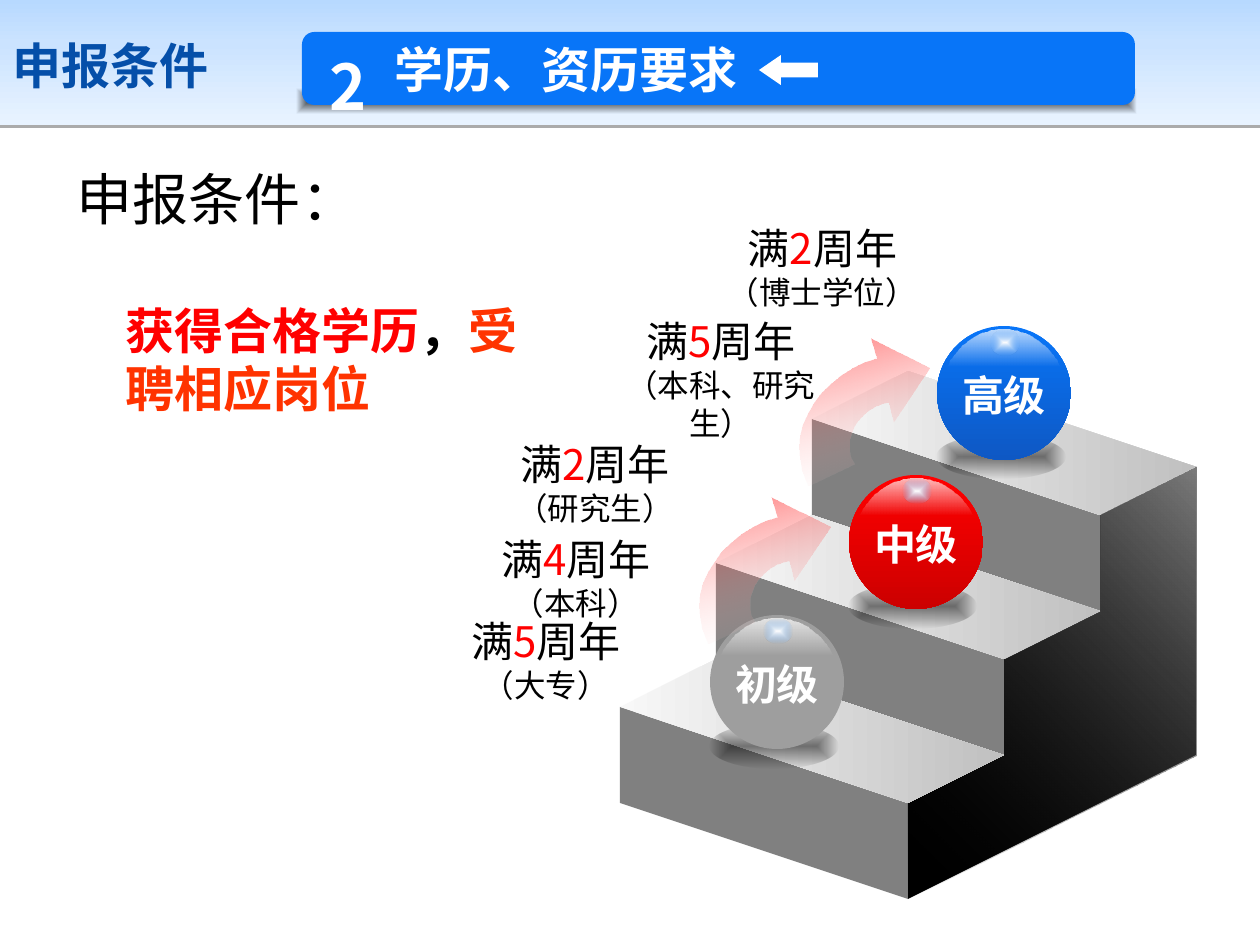
import dataclasses
import math

import lxml.etree
import pptx
import pptx.dml.color
import pptx.enum.shapes
import pptx.enum.text
import pptx.oxml.ns
import pptx.shapes.autoshape
import pptx.slide
import pptx.util

EMU_PER_PX = 914400 / 126
RGBColor = pptx.dml.color.RGBColor
Shapes = pptx.enum.shapes.MSO_SHAPE
Align = pptx.enum.text.PP_ALIGN
Anchor = pptx.enum.text.MSO_ANCHOR
qn = pptx.oxml.ns.qn

BLACK = RGBColor(0x00, 0x00, 0x00)
WHITE = RGBColor(0xFF, 0xFF, 0xFF)
RED = RGBColor(0xFF, 0x00, 0x00)
DARK_RED = RGBColor(0xCC, 0x00, 0x00)
ORANGE = RGBColor(0xFF, 0x33, 0x00)
BLUE = RGBColor(0x08, 0x75, 0xF8)
DARK_BLUE = RGBColor(0x0E, 0x58, 0xC4)
TITLE_BLUE = RGBColor(0x05, 0x4F, 0xA9)
GLINT_BLUE = RGBColor(0x67, 0xAB, 0xF5)
HEADER_TOP = RGBColor(0xB7, 0xD9, 0xFF)
HEADER_MIDDLE = RGBColor(0xCB, 0xE3, 0xFF)
HEADER_BOTTOM = RGBColor(0xE8, 0xF3, 0xFF)
GRAY = RGBColor(0x80, 0x80, 0x80)
BALL_GRAY = RGBColor(0x9E, 0x9E, 0x9E)
STEP_LIGHT = RGBColor(0xF8, 0xF8, 0xF8)
STEP_DARK = RGBColor(0xC0, 0xC0, 0xC0)
SIDE_GRAY = RGBColor(0x7C, 0x7C, 0x7C)
CJK = "Noto Sans CJK SC"

Point = tuple[float, float]
Box = tuple[int, int, int, int]


@dataclasses.dataclass(frozen=True)
class Stop:
    position: int
    color: RGBColor
    opacity: int = 100


@dataclasses.dataclass(frozen=True)
class Gradient:
    stops: tuple[Stop, ...]
    angle: int | None = None


@dataclasses.dataclass(frozen=True)
class Run:
    text: str
    color: RGBColor = BLACK
    size: int | None = None


@dataclasses.dataclass(frozen=True)
class Ball:
    label: str
    left: int
    top: int
    fill: RGBColor | Gradient


@dataclasses.dataclass(frozen=True)
class Requirement:
    years: str
    degree: str
    left: int
    top: int
    width: int = 266


def two_stops(first: Stop, last: Stop, angle: int | None = None) -> Gradient:
    return Gradient((first, last), angle)


def px(length: float) -> int:
    return round(length * EMU_PER_PX)


def paint(shape: pptx.shapes.autoshape.Shape, fill: RGBColor | Gradient) -> None:
    shape.shadow.inherit = False
    shape.line.fill.background()
    if isinstance(fill, RGBColor):
        shape.fill.solid()
        shape.fill.fore_color.rgb = fill
        return
    shape.fill.gradient()
    element = shape._element.spPr.find(qn("a:gradFill"))
    for child in list(element):
        element.remove(child)
    stop_list = lxml.etree.SubElement(element, qn("a:gsLst"))
    for stop in fill.stops:
        stop_element = lxml.etree.SubElement(stop_list, qn("a:gs"), pos=str(stop.position * 1000))
        color = lxml.etree.SubElement(stop_element, qn("a:srgbClr"), val=str(stop.color))
        if stop.opacity < 100:
            lxml.etree.SubElement(color, qn("a:alpha"), val=str(stop.opacity * 1000))
    if fill.angle is None:
        radial = lxml.etree.SubElement(element, qn("a:path"), path="shape")
        lxml.etree.SubElement(radial, qn("a:fillToRect"), l="50000", t="50000", r="50000", b="50000")
    else:
        lxml.etree.SubElement(element, qn("a:lin"), ang=str(fill.angle * 60000), scaled="0")


def add_preset(slide: pptx.slide.Slide, kind: Shapes, box: Box, fill: RGBColor | Gradient,
               adjustments: tuple[float, ...] = ()) -> pptx.shapes.autoshape.Shape:
    shape = slide.shapes.add_shape(kind, *map(px, box))
    for index, value in enumerate(adjustments):
        shape.adjustments[index] = value
    paint(shape, fill)
    return shape


def add_outline(slide: pptx.slide.Slide, points: list[Point], fill: RGBColor | Gradient) -> None:
    builder = slide.shapes.build_freeform(*points[0], scale=EMU_PER_PX)
    builder.add_line_segments(points[1:], close=True)
    paint(builder.convert_to_shape(), fill)


def add_text(slide: pptx.slide.Slide, box: Box, paragraphs: list[list[Run]], *, size: int,
             font: str = CJK, bold: bool = False, align: Align = Align.LEFT,
             anchor: Anchor = Anchor.TOP, side_inset: int = 13, top_inset: int = 6,
             line_spacing: float | None = None) -> None:
    frame = slide.shapes.add_textbox(*map(px, box)).text_frame
    frame.word_wrap = True
    frame.vertical_anchor = anchor
    frame.margin_left = frame.margin_right = px(side_inset)
    frame.margin_top = frame.margin_bottom = px(top_inset)
    for index, runs in enumerate(paragraphs):
        paragraph = frame.paragraphs[0] if index == 0 else frame.add_paragraph()
        paragraph.alignment = align
        paragraph.line_spacing = line_spacing
        for item in runs:
            run = paragraph.add_run()
            run.text = item.text
            run.font.size = pptx.util.Pt(item.size or size)
            run.font.bold = bold
            run.font.name = font
            run.font.color.rgb = item.color
            lxml.etree.SubElement(run._r.get_or_add_rPr(), qn("a:ea"), typeface=font)


def add_header(slide: pptx.slide.Slide) -> None:
    stops = (Stop(0, HEADER_TOP), Stop(35, HEADER_MIDDLE), Stop(100, HEADER_BOTTOM))
    band = add_preset(slide, Shapes.RECTANGLE, (0, 0, 1260, 125), Gradient(stops, 90))
    effects = band._element.spPr.find(qn("a:effectLst"))
    shadow = lxml.etree.SubElement(effects, qn("a:outerShdw"), dist="20320", dir="5400000")
    color = lxml.etree.SubElement(shadow, qn("a:srgbClr"), val=str(BLACK))
    lxml.etree.SubElement(color, qn("a:alpha"), val="32000")
    add_text(slide, (0, 20, 1131, 89), [[Run("申报条件", TITLE_BLUE)]], size=28, font="Arial",
             bold=True, anchor=Anchor.MIDDLE)
    add_preset(slide, Shapes.RECTANGLE, (297, 89, 839, 25),
               two_stops(Stop(0, BLACK, 70), Stop(100, BLACK, 0)))
    add_preset(slide, Shapes.ROUNDED_RECTANGLE, (302, 32, 833, 73), BLUE, (0.17,))
    add_preset(slide, Shapes.LEFT_ARROW, (759, 55, 59, 30), WHITE, (0.5, 0.73))
    add_text(slide, (336, 48, 25, 39), [[Run("2", WHITE)]], size=36, bold=True,
             align=Align.CENTER, side_inset=-10, top_inset=0)
    add_text(slide, (312, 32, 745, 73), [[Run("学历、资历要求", WHITE)]], size=28, bold=True,
             anchor=Anchor.MIDDLE, side_inset=83)


def add_stairs(slide: pptx.slide.Slide) -> None:
    side = [(908, 899), (908, 803), (1004, 755), (1004, 659), (1100, 611), (1100, 515),
            (1196, 467), (1196, 755)]
    tread = two_stops(Stop(0, STEP_LIGHT), Stop(100, STEP_DARK), 0)
    corners = [(620 + 96 * step, 707 - 144 * step) for step in range(3)]
    add_outline(slide, side, BLACK)
    for x, y in corners:
        add_outline(slide, [(x, y), (x + 288, y + 96), (x + 288, y + 192), (x, y + 96)], GRAY)
    for x, y in reversed(corners):
        add_outline(slide, [(x, y), (x + 96, y - 48), (x + 384, y + 48), (x + 288, y + 96)], tread)
    add_outline(slide, side, two_stops(Stop(0, BLACK, 0), Stop(100, SIDE_GRAY), 315))


def add_ball(slide: pptx.slide.Slide, ball: Ball) -> None:
    left, top = ball.left, ball.top
    add_preset(slide, Shapes.OVAL, (left, top + 109, 128, 44),
               two_stops(Stop(0, BLACK, 50), Stop(100, BLACK, 0)))
    add_preset(slide, Shapes.OVAL, (left, top, 134, 134), ball.fill)
    angles = [math.radians(degrees) for degrees in range(-66, 67, 3)]
    cap = [(left + 67 + 61 * math.sin(angle), top + 65 - 61 * math.cos(angle)) for angle in angles]
    add_outline(slide, cap, two_stops(Stop(0, WHITE, 75), Stop(100, WHITE, 0), 90))
    add_preset(slide, Shapes.OVAL, (left + 54, top + 4, 28, 25),
               two_stops(Stop(0, WHITE), Stop(100, GLINT_BLUE, 0)))
    add_text(slide, (left + 12, top + 38, 110, 63), [[Run(ball.label, WHITE)]], size=24,
             font="Montserrat", bold=True, align=Align.CENTER, side_inset=0)


def curve(start: Point, first: Point, second: Point, end: Point) -> list[Point]:
    points = []
    for step in range(13):
        t = step / 12
        weights = ((1 - t) ** 3, 3 * t * (1 - t) ** 2, 3 * t * t * (1 - t), t ** 3)
        controls = (start, first, second, end)
        points.append((sum(w * c[0] for w, c in zip(weights, controls)),
                       sum(w * c[1] for w, c in zip(weights, controls))))
    return points


def add_curved_arrow(slide: pptx.slide.Slide, left: int, top: int) -> None:
    points = [*curve((89, 63), (61, 69), (45, 94), (51, 117)), (55, 124), (9, 146),
              *curve((3, 131), (-10, 84), (23, 35), (77, 20)), (71, 0), (130, 29), (94, 83)]
    add_outline(slide, [(left + x, top + y) for x, y in points],
                two_stops(Stop(0, WHITE, 0), Stop(100, RED, 50), 255))


def add_requirement(slide: pptx.slide.Slide, item: Requirement) -> None:
    add_text(slide, (item.left, item.top, item.width, 102),
             [[Run("满"), Run(item.years, RED), Run("周年")], [Run(item.degree, size=18)]],
             size=24, align=Align.CENTER)


def main() -> None:
    presentation = pptx.Presentation()
    presentation.slide_width, presentation.slide_height = px(1260), px(945)
    slide = presentation.slides.add_slide(presentation.slide_layouts[6])
    add_header(slide)
    add_stairs(slide)
    add_ball(slide, Ball("高级", 937, 326, two_stops(Stop(0, BLUE), Stop(100, DARK_BLUE), 90)))
    add_ball(slide, Ball("初级", 710, 615, BALL_GRAY))
    add_curved_arrow(slide, 700, 498)
    add_ball(slide, Ball("中级", 849, 475, two_stops(Stop(0, RED), Stop(100, DARK_RED), 90)))
    add_curved_arrow(slide, 799, 339)
    add_text(slide, (113, 294, 427, 131),
             [[Run("获得合格学历", RED), Run("，"), Run("受聘相应岗位", ORANGE)]], size=28, bold=True)
    add_text(slide, (64, 145, 595, 89), [[Run("申报条件：")]], size=32, line_spacing=1.2)
    for item in (Requirement("5", "（大专）", 413, 610),
                 Requirement("2", "（博士学位）", 709, 217, 227),
                 Requirement("5", "（本科、研究生）", 588, 310),
                 Requirement("2", "（研究生）", 462, 433),
                 Requirement("4", "（本科）", 443, 528)):
        add_requirement(slide, item)
    presentation.save("out.pptx")


if __name__ == "__main__":
    main()
